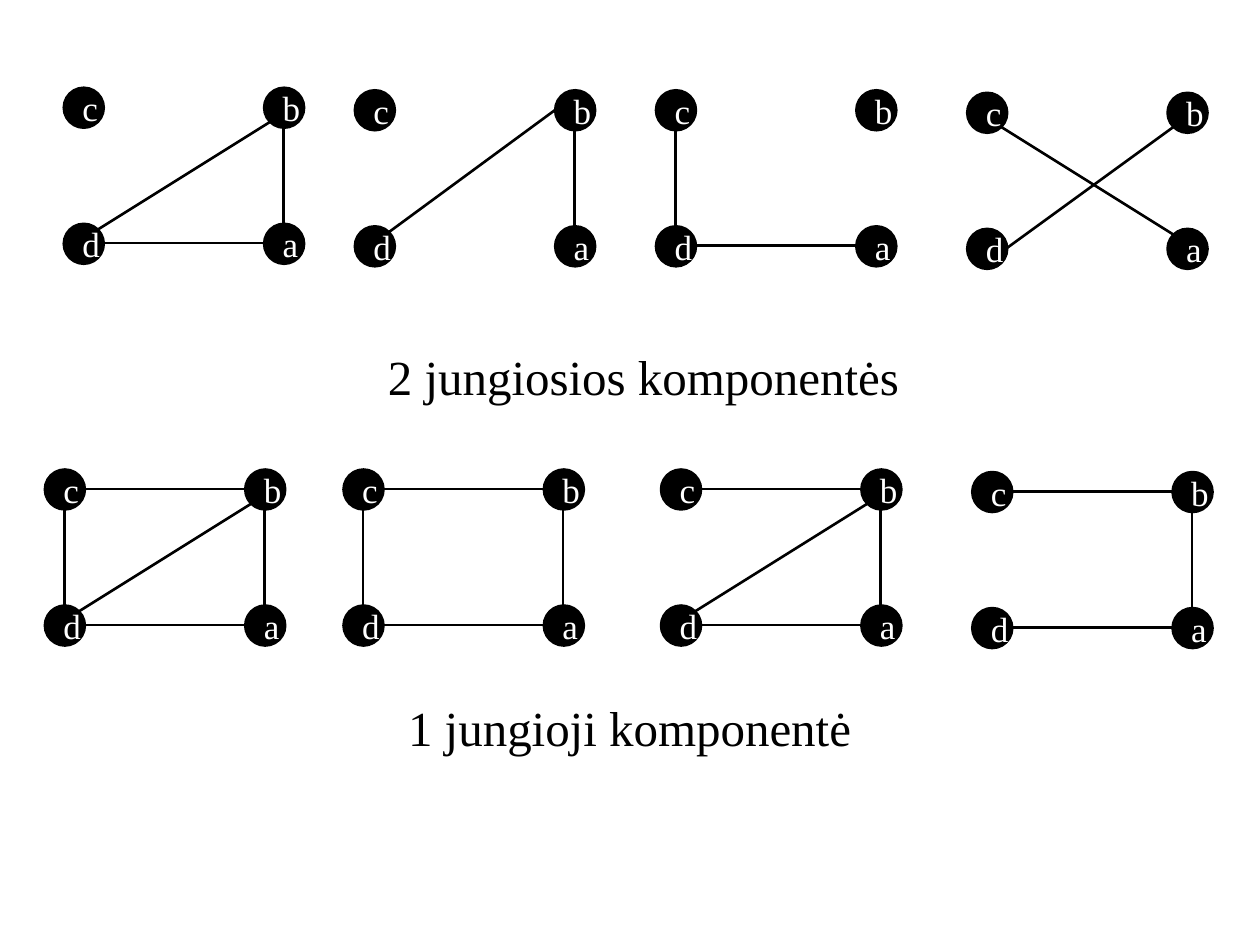
import pptx
import pptx.dml.color
import pptx.enum.shapes
import pptx.enum.text
import pptx.oxml.ns
import pptx.util
from lxml import etree

BLACK = pptx.dml.color.RGBColor(0, 0, 0)
WHITE = pptx.dml.color.RGBColor(255, 255, 255)
NODES = {"c": (0, 0), "b": (159, 0), "d": (0, 108), "a": (159, 108)}
SITES = {
    "top": (15, 0), "bottom": (15, 31), "left": (0, 15), "right": (31, 15),
    "top left": (4, 4), "top right": (27, 4),
    "bottom left": (4, 27), "bottom right": (27, 27),
}
EDGES = {
    "cb": ("c", "right", "b", "left"),
    "da": ("d", "right", "a", "left"),
    "ba": ("b", "bottom", "a", "top"),
    "cd": ("c", "bottom", "d", "top"),
    "ca": ("c", "bottom right", "a", "top left"),
    "db": ("d", "top right", "b", "bottom left"),
    "db to left": ("d", "top right", "b", "left"),
    "db from right": ("d", "right", "b", "bottom left"),
}
GRAPHS = [
    (51, 70, ["da", "db", "ba"]),
    (282, 72, ["db to left", "ba"]),
    (521, 72, ["da", "cd"]),
    (768, 74, ["db from right", "ca"]),
    (36, 373, ["da", "db", "ba", "cd", "cb"]),
    (273, 373, ["da", "ba", "cd", "cb"]),
    (525, 373, ["da", "db", "ba", "cb"]),
    (772, 375, ["da", "ba", "cb"]),
]
CAPTIONS = [
    ("2 jungiosios komponentės", 298, 270, 555),
    ("1 jungioji komponentė", 314, 549, 492),
]


class GraphSlide:
    """Holds the style and the current slide, at 100 px to the inch."""

    scale = 9144
    node_size = 31
    node_font = {"name": "Times New Roman", "size": pptx.util.Pt(20)}
    caption_font = {"name": "Times New Roman", "size": pptx.util.Pt(28)}

    def __init__(self, presentation):
        self.slide = presentation.slides.add_slide(presentation.slide_layouts[6])

    def emu(self, *lengths):
        return [length * self.scale for length in lengths]

    def add_text(self, frame, text, color, font, alignment):
        frame.word_wrap = True
        paragraph = frame.paragraphs[0]
        paragraph.alignment = alignment
        run = paragraph.add_run()
        run.text = text
        for name, value in font.items():
            setattr(run.font, name, value)
        run.font.color.rgb = color

    def node(self, group, label, left, top):
        shape = group.shapes.add_shape(
            pptx.enum.shapes.MSO_SHAPE.OVAL,
            *self.emu(left, top, self.node_size, self.node_size))
        shape.shadow.inherit = False
        shape.fill.solid()
        shape.fill.fore_color.rgb = BLACK
        shape.line.color.rgb = BLACK
        shape.line.width = pptx.util.Pt(2)
        shape.text_frame.vertical_anchor = pptx.enum.text.MSO_ANCHOR.MIDDLE
        self.add_text(shape.text_frame, label, WHITE, self.node_font,
                      pptx.enum.text.PP_ALIGN.CENTER)

    def edge(self, group, start, end):
        connector = group.shapes.add_connector(
            pptx.enum.shapes.MSO_CONNECTOR.STRAIGHT, *self.emu(*start, *end))
        connector.line.color.rgb = BLACK
        connector.line.width = pptx.util.Pt(1.5)
        etree.SubElement(connector.element.spPr, pptx.oxml.ns.qn("a:effectLst"))

    def graph(self, left, top, edges):
        group = self.slide.shapes.add_group_shape()
        for label, (x, y) in NODES.items():
            self.node(group, label, left + x, top + y)

        def point(label, site):
            return (left + NODES[label][0] + SITES[site][0],
                    top + NODES[label][1] + SITES[site][1])

        for name in edges:
            first, first_site, last, last_site = EDGES[name]
            self.edge(group, point(first, first_site), point(last, last_site))

    def caption(self, text, left, top, width):
        box = self.slide.shapes.add_textbox(*self.emu(left, top, width, 57))
        box.text_frame.auto_size = pptx.enum.text.MSO_AUTO_SIZE.SHAPE_TO_FIT_TEXT
        self.add_text(box.text_frame, text, BLACK, self.caption_font,
                      pptx.enum.text.PP_ALIGN.LEFT)


def main():
    presentation = pptx.Presentation()
    presentation.slide_width = pptx.util.Inches(10)
    presentation.slide_height = pptx.util.Inches(7.5)
    page = GraphSlide(presentation)
    for graph in GRAPHS:
        page.graph(*graph)
    for caption in CAPTIONS:
        page.caption(*caption)
    presentation.save("out.pptx")


if __name__ == "__main__":
    main()
